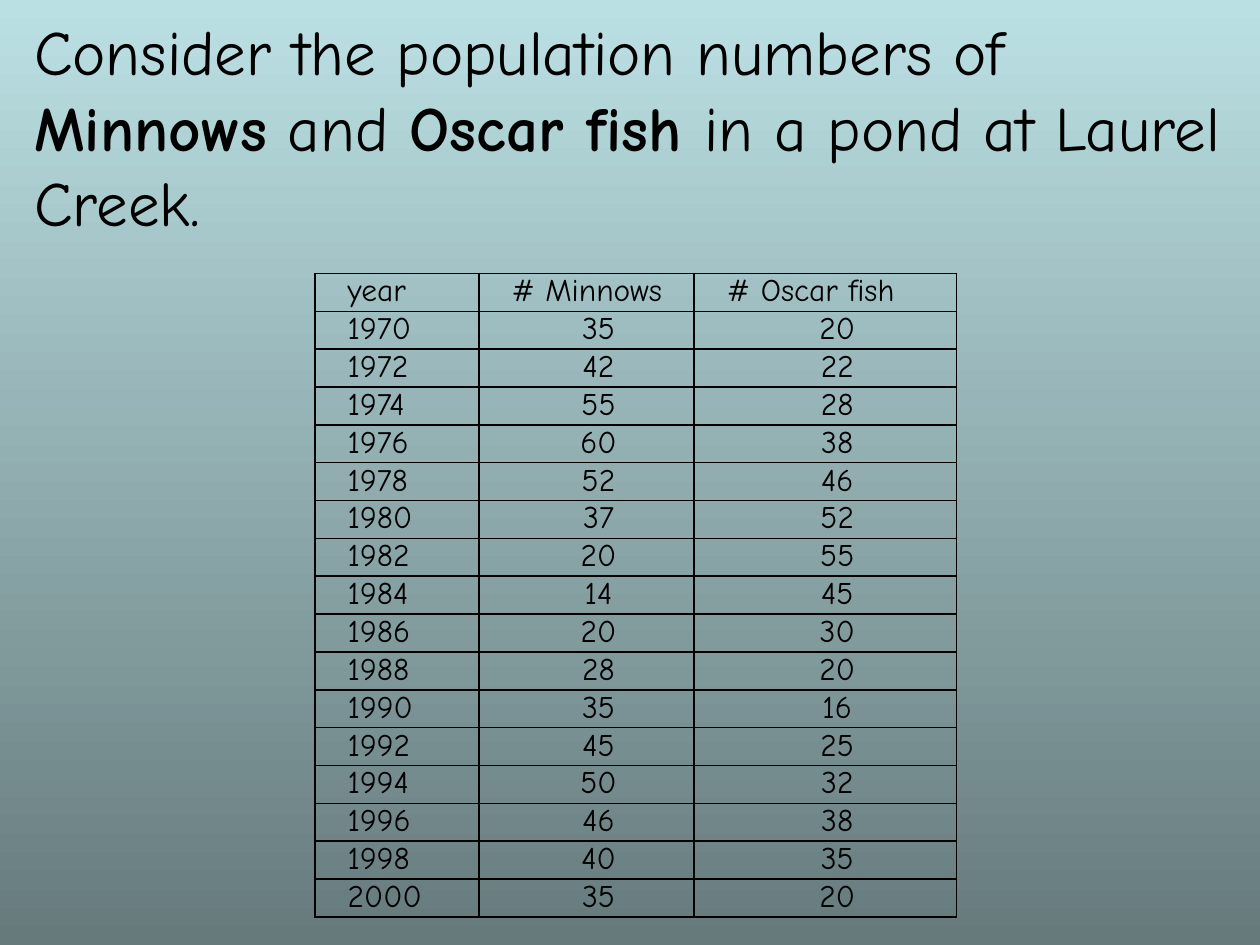
from dataclasses import dataclass
from typing import Any, NamedTuple

from lxml.etree import SubElement
from pptx import Presentation
from pptx.dml.color import RGBColor
from pptx.enum.text import MSO_ANCHOR, MSO_AUTO_SIZE, PP_ALIGN
from pptx.oxml.ns import qn
from pptx.util import Inches, Pt


@dataclass(frozen=True)
class Theme:
    font: str = "Comic Neue"
    ink: RGBColor = RGBColor(0, 0, 0)
    sky: RGBColor = RGBColor(0xBB, 0xE0, 0xE3)
    depth: RGBColor = RGBColor(0x66, 0x7A, 0x7C)
    title_size: Pt = Pt(36)
    table_size: Pt = Pt(18)
    border: Pt = Pt(1)


class Phrase(NamedTuple):
    text: str
    bold: bool = False


class Count(NamedTuple):
    year: int
    minnows: int
    oscars: int


THEME = Theme()
TITLE = [
    Phrase("Consider the population numbers of "),
    Phrase("Minnows", True),
    Phrase(" and "),
    Phrase("Oscar fish ", True),
    Phrase("in a pond at Laurel Creek."),
]
HEADINGS = ("year", "# Minnows", "# Oscar fish")
MINNOWS = (35, 42, 55, 60, 52, 37, 20, 14, 20, 28, 35, 45, 50, 46, 40, 35)
OSCARS = (20, 22, 28, 38, 46, 52, 55, 45, 30, 20, 16, 25, 32, 38, 35, 20)
COUNTS = [Count(*values) for values in zip(range(1970, 2001, 2), MINNOWS, OSCARS)]
COLUMN_WIDTHS = (1.3, 1.71, 2.08)
ROW_HEIGHT = 0.3


def apply(target: Any, values: dict[str, Any]) -> None:
    for name, value in values.items():
        setattr(target, name, value)


def add_span(para: Any, phrase: Phrase, size: Pt) -> None:
    span = para.add_run()
    span.text = phrase.text
    apply(span.font, {"name": THEME.font, "size": size, "bold": phrase.bold})
    span.font.color.rgb = THEME.ink


def paint_background(page: Any) -> None:
    fill = page.background.fill
    fill.gradient()
    fill.gradient_angle = 270
    for stop, color, position in zip(
        fill.gradient_stops, (THEME.sky, THEME.depth), (0, 1)
    ):
        stop.color.rgb = color
        stop.position = position


def write_title(page: Any) -> None:
    box = page.shapes.title
    apply(box, {"left": Inches(0.17), "top": Inches(0.05),
                "width": Inches(9.67), "height": Inches(1.9)})
    apply(box.text_frame, {"word_wrap": True, "vertical_anchor": MSO_ANCHOR.MIDDLE,
                           "auto_size": MSO_AUTO_SIZE.SHAPE_TO_FIT_TEXT})
    para = box.text_frame.paragraphs[0]
    para.alignment = PP_ALIGN.LEFT
    for phrase in TITLE:
        add_span(para, phrase, THEME.title_size)


def draw_borders(cell: Any) -> None:
    properties = cell._tc.get_or_add_tcPr()
    for position, side in enumerate(("a:lnL", "a:lnR", "a:lnT", "a:lnB")):
        line = SubElement(properties, qn(side), w=str(THEME.border))
        fill = SubElement(line, qn("a:solidFill"))
        SubElement(fill, qn("a:srgbClr"), val=str(THEME.ink))
        properties.insert(position, line)


def write_cell(cell: Any, text: str, alignment: PP_ALIGN) -> None:
    apply(cell, {"margin_left": Inches(0.07), "margin_right": Inches(0.07),
                 "margin_top": 0, "margin_bottom": 0})
    cell.fill.background()
    draw_borders(cell)
    para = cell.text_frame.paragraphs[0]
    para.alignment = alignment
    indents = para._p.get_or_add_pPr()
    indents.set("marL", str(Inches(0.5)))
    indents.set("indent", str(Inches(-0.31)))
    add_span(para, Phrase(text), THEME.table_size)


def add_population_table(page: Any) -> None:
    rows = [HEADINGS, *COUNTS]
    table = page.shapes.add_table(
        len(rows), len(HEADINGS), Inches(2.5), Inches(2.17),
        Inches(sum(COLUMN_WIDTHS)), Inches(ROW_HEIGHT * len(rows)),
    ).table
    apply(table, {"first_row": False, "horz_banding": False})
    for column, width in zip(table.columns, COLUMN_WIDTHS):
        column.width = Inches(width)
    for row_index, values in enumerate(rows):
        table.rows[row_index].height = Inches(ROW_HEIGHT)
        for column_index, value in enumerate(values):
            centred = row_index > 0 and column_index > 0
            alignment = PP_ALIGN.CENTER if centred else PP_ALIGN.LEFT
            write_cell(table.cell(row_index, column_index), str(value), alignment)


def main() -> None:
    deck = Presentation()
    apply(deck, {"slide_width": Inches(10), "slide_height": Inches(7.5)})
    page = deck.slides.add_slide(deck.slide_layouts[5])
    paint_background(page)
    write_title(page)
    add_population_table(page)
    deck.save("out.pptx")


if __name__ == "__main__":
    main()
